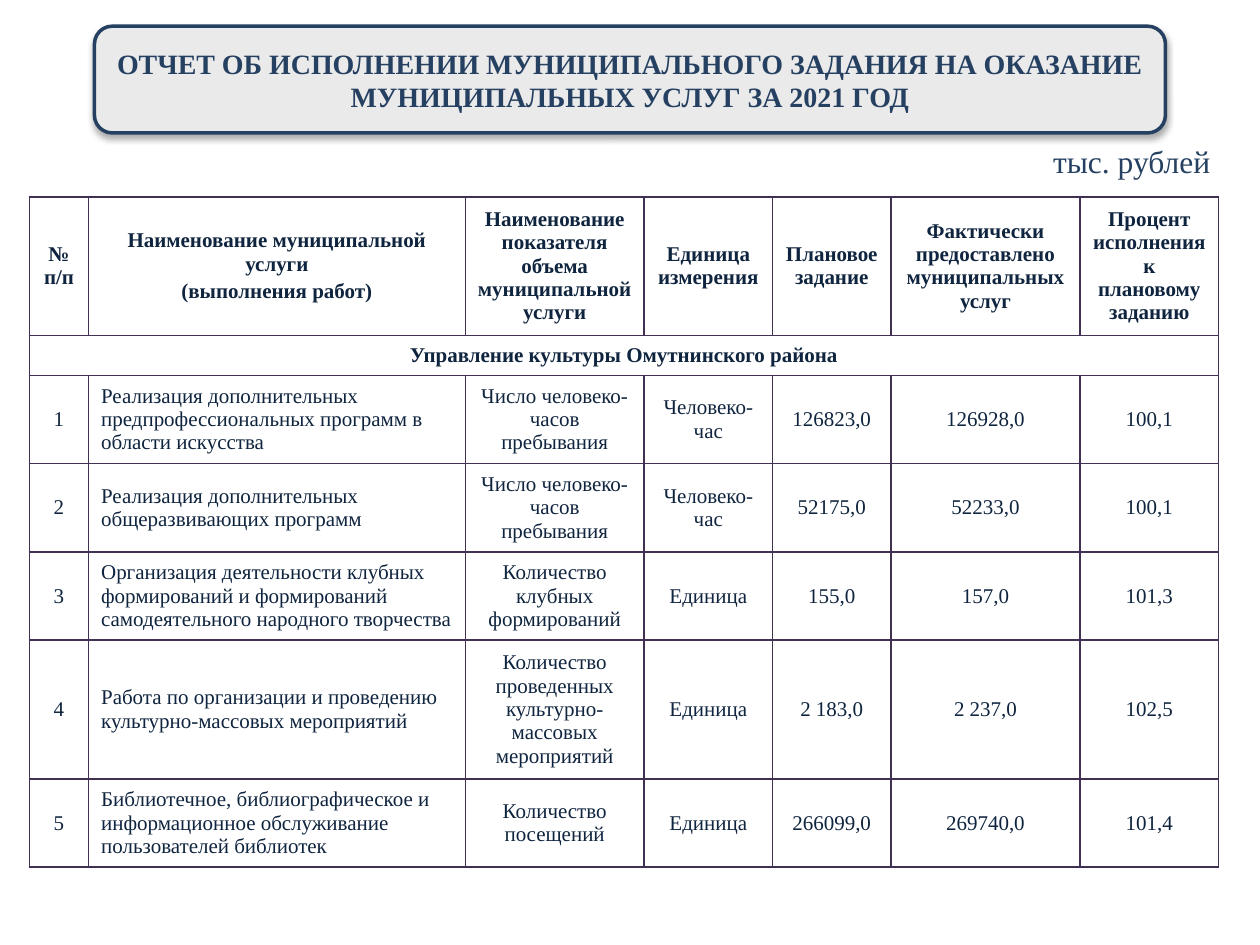
"""Build a one-slide report table on municipal services for 2021."""
from lxml import etree
from pptx import Presentation
from pptx.dml.color import RGBColor
from pptx.enum.shapes import MSO_SHAPE as Shape
from pptx.enum.text import MSO_ANCHOR as Anchor, MSO_AUTO_SIZE as AutoSize, PP_ALIGN as Align
from pptx.oxml import parse_xml
from pptx.oxml.ns import nsdecls, qn
from pptx.util import Pt

NAVY = RGBColor(0x25, 0x40, 0x61)
INK = RGBColor(0x0F, 0x24, 0x3E)
PURPLE = RGBColor(0x40, 0x31, 0x52)
GRAY = RGBColor(0xEA, 0xEA, 0xEA)
WHITE = RGBColor(0xFF, 0xFF, 0xFF)

TITLE = "ОТЧЕТ ОБ ИСПОЛНЕНИИ МУНИЦИПАЛЬНОГО ЗАДАНИЯ НА ОКАЗАНИЕ МУНИЦИПАЛЬНЫХ УСЛУГ ЗА 2021 ГОД"
HEADER = [
    "№ п/п",
    "Наименование муниципальной услуги\n(выполнения работ)",
    "Наименование показателя объема муниципальной услуги",
    "Единица измерения",
    "Плановое задание",
    "Фактически предоставлено муниципальных услуг",
    "Процент исполнения к плановому заданию",
]
DEPARTMENT = "Управление культуры Омутнинского района"
SERVICES = [
    ("Реализация дополнительных предпрофессиональных программ в области искусства",
     "Число человеко-часов пребывания", "Человеко-час", "126823,0", "126928,0", "100,1"),
    ("Реализация дополнительных общеразвивающих программ",
     "Число человеко-часов пребывания", "Человеко-час", "52175,0", "52233,0", "100,1"),
    ("Организация деятельности клубных формирований и формирований самодеятельного народного творчества",
     "Количество клубных формирований", "Единица", "155,0", "157,0", "101,3"),
    ("Работа по организации и проведению культурно-массовых мероприятий",
     "Количество проведенных культурно-массовых мероприятий", "Единица", "2 183,0", "2 237,0", "102,5"),
    ("Библиотечное, библиографическое и информационное обслуживание пользователей библиотек",
     "Количество посещений", "Единица", "266099,0", "269740,0", "101,4"),
]
COLUMN_WIDTHS = [33.8, 215.3, 102.2, 73.4, 67.7, 108, 79.2]
ROW_HEIGHTS = [78.9, 22.8, 50.3, 50.3, 50.3, 78.9, 50.3]


class ReportSlide:
    """Hold the text style and the current slide, and draw its elements."""

    def __init__(self, page, font_name="Times New Roman"):
        self.page = page
        self.font_name = font_name

    def set_text(self, frame, text, size, color, bold=False, align=Align.CENTER):
        frame.text = text
        for index, para in enumerate(frame.paragraphs):
            para.alignment = align
            para.space_before = Pt(0.2 * size if index else 0)
            for span in para.runs:
                span.font.name = self.font_name
                span.font.size = Pt(size)
                span.font.bold = bold
                span.font.color.rgb = color

    def title(self, text, left, top, width, height):
        area = Pt(left), Pt(top), Pt(width), Pt(height)
        title = self.page.shapes.title
        title.left, title.top, title.width, title.height = area
        frame = title.text_frame
        frame.word_wrap = True
        frame.auto_size = AutoSize.NONE
        frame.vertical_anchor = Anchor.MIDDLE
        self.set_text(frame, text, 16, NAVY, bold=True)

        panel = self.page.shapes.add_shape(Shape.ROUNDED_RECTANGLE, *area)
        panel.fill.solid()
        panel.fill.fore_color.rgb = GRAY
        panel.line.color.rgb = NAVY
        panel.line.width = Pt(2)
        panel.shadow.inherit = False
        effects = panel._element.spPr.find(qn("a:effectLst"))
        effects.append(parse_xml(
            f'<a:outerShdw {nsdecls("a")} blurRad="{Pt(3.5)}" dist="{Pt(2.2)}" dir="5400000" '
            'rotWithShape="0"><a:srgbClr val="000000"><a:alpha val="32000"/></a:srgbClr></a:outerShdw>'))
        title._element.addprevious(panel._element)

    def label(self, text, left, top, width, height):
        box = self.page.shapes.add_textbox(Pt(left), Pt(top), Pt(width), Pt(height))
        box.text_frame.word_wrap = True
        box.text_frame.auto_size = AutoSize.SHAPE_TO_FIT_TEXT
        self.set_text(box.text_frame, text, 18, NAVY, align=Align.LEFT)

    def border(self, cell):
        properties = cell._tc.get_or_add_tcPr()
        for index, side in enumerate(("lnL", "lnR", "lnT", "lnB")):
            line = etree.Element(qn(f"a:{side}"), w=str(Pt(1)))
            fill = etree.SubElement(line, qn("a:solidFill"))
            etree.SubElement(fill, qn("a:srgbClr"), val=str(PURPLE))
            properties.insert(index, line)

    def table(self, rows, left, top):
        table = self.page.shapes.add_table(
            len(rows), len(COLUMN_WIDTHS), Pt(left), Pt(top),
            Pt(sum(COLUMN_WIDTHS)), Pt(sum(ROW_HEIGHTS))).table
        table.first_row = table.horz_banding = False
        for column, width in zip(table.columns, COLUMN_WIDTHS):
            column.width = Pt(width)
        for row_index, (row, height, texts) in enumerate(zip(table.rows, ROW_HEIGHTS, rows)):
            row.height = Pt(height)
            if len(texts) == 1:
                table.cell(row_index, 0).merge(table.cell(row_index, len(COLUMN_WIDTHS) - 1))
            for cell in row.cells:
                cell.fill.solid()
                cell.fill.fore_color.rgb = WHITE
                cell.vertical_anchor = Anchor.MIDDLE
                self.border(cell)
            for column_index, text in enumerate(texts):
                heading = row_index < 2
                align = Align.LEFT if column_index == 1 and not heading else Align.CENTER
                frame = table.cell(row_index, column_index).text_frame
                self.set_text(frame, text, 12, INK, heading, align)


def main():
    deck = Presentation()
    deck.slide_width, deck.slide_height = Pt(720), Pt(540)
    report = ReportSlide(deck.slides.add_slide(deck.slide_layouts[5]))
    report.title(TITLE, 54, 15, 612, 61)
    report.label("тыс. рублей", 594.7, 77.8, 122, 29)
    numbered = [(str(number), *service) for number, service in enumerate(SERVICES, 1)]
    report.table([HEADER, [DEPARTMENT], *numbered], 16.8, 112.5)
    deck.save("out.pptx")


if __name__ == "__main__":
    main()
